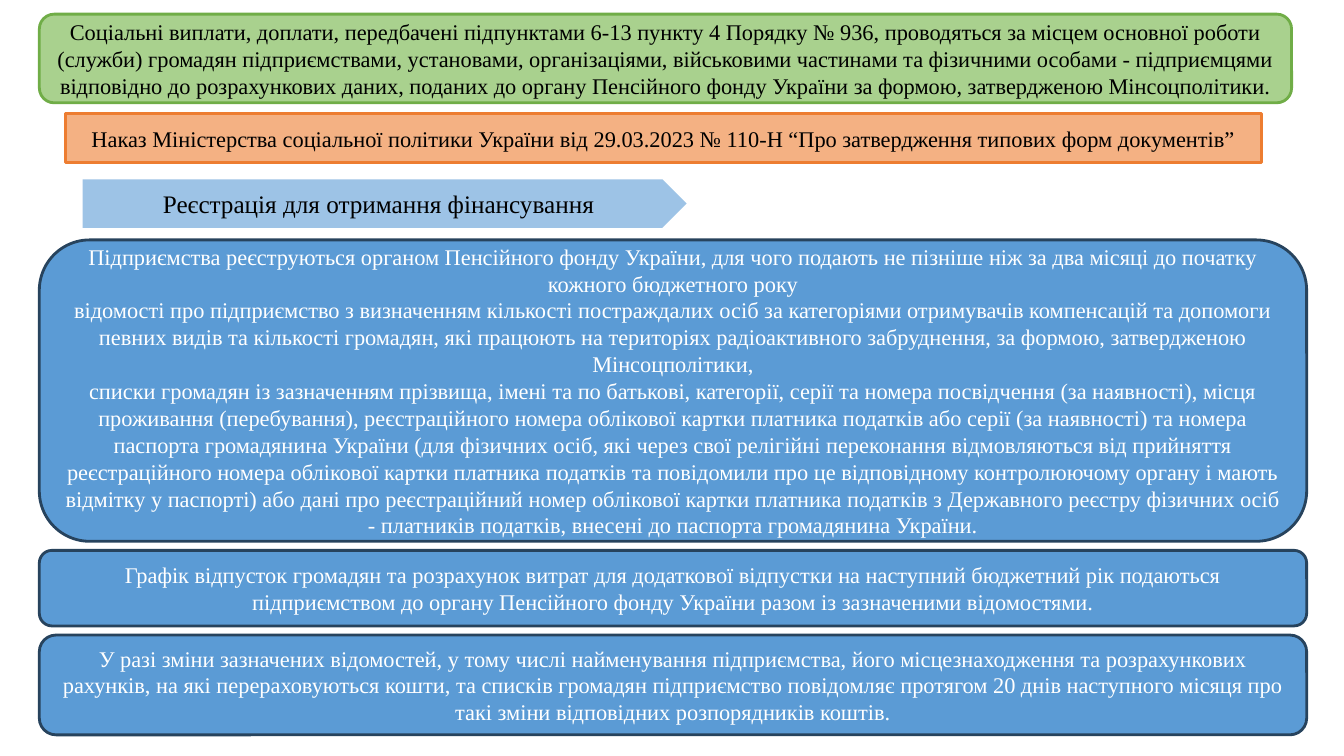
from pptx import Presentation
from pptx.dml.color import RGBColor
from pptx.enum.shapes import MSO_SHAPE
from pptx.enum.text import MSO_ANCHOR, PP_ALIGN
from pptx.util import Inches, Pt

FONT = "Times New Roman"

# style: shape kind, corner or point adjustment, fill, line, text colour, text size
STYLES = {
    "rule": (MSO_SHAPE.ROUNDED_RECTANGLE, 0.167, "A9D18E", "70AD47", "000000", 16),
    "order": (MSO_SHAPE.RECTANGLE, None, "F4B183", "ED7D31", "000000", 16),
    "heading": (MSO_SHAPE.PENTAGON, 0.5, "9DC3E6", None, "000000", 18),
    "step": (MSO_SHAPE.ROUNDED_RECTANGLE, 0.167, "5B9BD5", "27435D", "FFFFFF", 16),
}

# style, (left, top, width, height) in inches, paragraphs
BLOCKS = [
    ("rule", (0.39, 0.14, 12.42, 0.88), [
        "Соціальні виплати, доплати, передбачені підпунктами 6-13 пункту 4 Порядку № 936, "
        "проводяться за місцем основної роботи (служби) громадян підприємствами, установами, "
        "організаціями, військовими частинами та фізичними особами - підприємцями відповідно до "
        "розрахункових даних, поданих до органу Пенсійного фонду України за формою, "
        "затвердженою Мінсоцполітики.",
    ]),
    ("order", (0.65, 1.13, 11.86, 0.48), [
        "Наказ Міністерства соціальної політики України від 29.03.2023 № 110-Н "
        "“Про затвердження типових форм документів”",
    ]),
    ("heading", (0.82, 1.78, 5.99, 0.48), ["Реєстрація для отримання фінансування"]),
    ("step", (0.39, 2.38, 12.57, 2.99), [
        "Підприємства реєструються органом Пенсійного фонду України, для чого подають "
        "не пізніше ніж за два місяці до початку кожного бюджетного року",
        "відомості про підприємство з визначенням кількості постраждалих осіб за категоріями "
        "отримувачів компенсацій та допомоги певних видів та кількості громадян, які працюють "
        "на територіях радіоактивного забруднення, за формою, затвердженою Мінсоцполітики,",
        "списки громадян із зазначенням прізвища, імені та по батькові, категорії, серії та "
        "номера посвідчення (за наявності), місця проживання (перебування), реєстраційного "
        "номера облікової картки платника податків або серії (за наявності) та номера паспорта "
        "громадянина України (для фізичних осіб, які через свої релігійні переконання "
        "відмовляються від прийняття реєстраційного номера облікової картки платника податків "
        "та повідомили про це відповідному контролюючому органу і мають відмітку у паспорті) "
        "або дані про реєстраційний номер облікової картки платника податків з Державного "
        "реєстру фізичних осіб - платників податків, внесені до паспорта громадянина України.",
    ]),
    ("step", (0.39, 5.46, 12.57, 0.75), [
        "Графік відпусток громадян та розрахунок витрат для додаткової відпустки на наступний "
        "бюджетний рік подаються підприємством до органу Пенсійного фонду України разом із "
        "зазначеними відомостями.",
    ]),
    ("step", (0.39, 6.3, 12.57, 0.99), [
        "У разі зміни зазначених відомостей, у тому числі найменування підприємства, його "
        "місцезнаходження та розрахункових рахунків, на які перераховуються кошти, та списків "
        "громадян підприємство повідомляє протягом 20 днів наступного місяця про такі зміни "
        "відповідних розпорядників коштів.",
    ]),
]


def color(hex_value):
    return RGBColor.from_string(hex_value)


def add_block(slide, style, box, paragraphs):
    kind, adjustment, fill, line, text_color, size = STYLES[style]
    shape = slide.shapes.add_shape(kind, *map(Inches, box))
    shape.shadow.inherit = False
    if adjustment is not None:
        shape.adjustments[0] = adjustment
    shape.fill.solid()
    shape.fill.fore_color.rgb = color(fill)
    if line:
        shape.line.color.rgb = color(line)
        shape.line.width = Pt(2)
    else:
        shape.line.fill.background()

    frame = shape.text_frame
    frame.word_wrap = True
    frame.vertical_anchor = MSO_ANCHOR.MIDDLE
    for index, text in enumerate(paragraphs):
        paragraph = frame.add_paragraph() if index else frame.paragraphs[0]
        paragraph.alignment = PP_ALIGN.CENTER
        run = paragraph.add_run()
        run.text = text
        run.font.name = FONT
        run.font.size = Pt(size)
        run.font.color.rgb = color(text_color)


def main():
    presentation = Presentation()
    presentation.slide_width = Inches(13.33)
    presentation.slide_height = Inches(7.5)
    slide = presentation.slides.add_slide(presentation.slide_layouts[6])
    for style, box, paragraphs in BLOCKS:
        add_block(slide, style, box, paragraphs)
    presentation.save("out.pptx")


if __name__ == "__main__":
    main()
